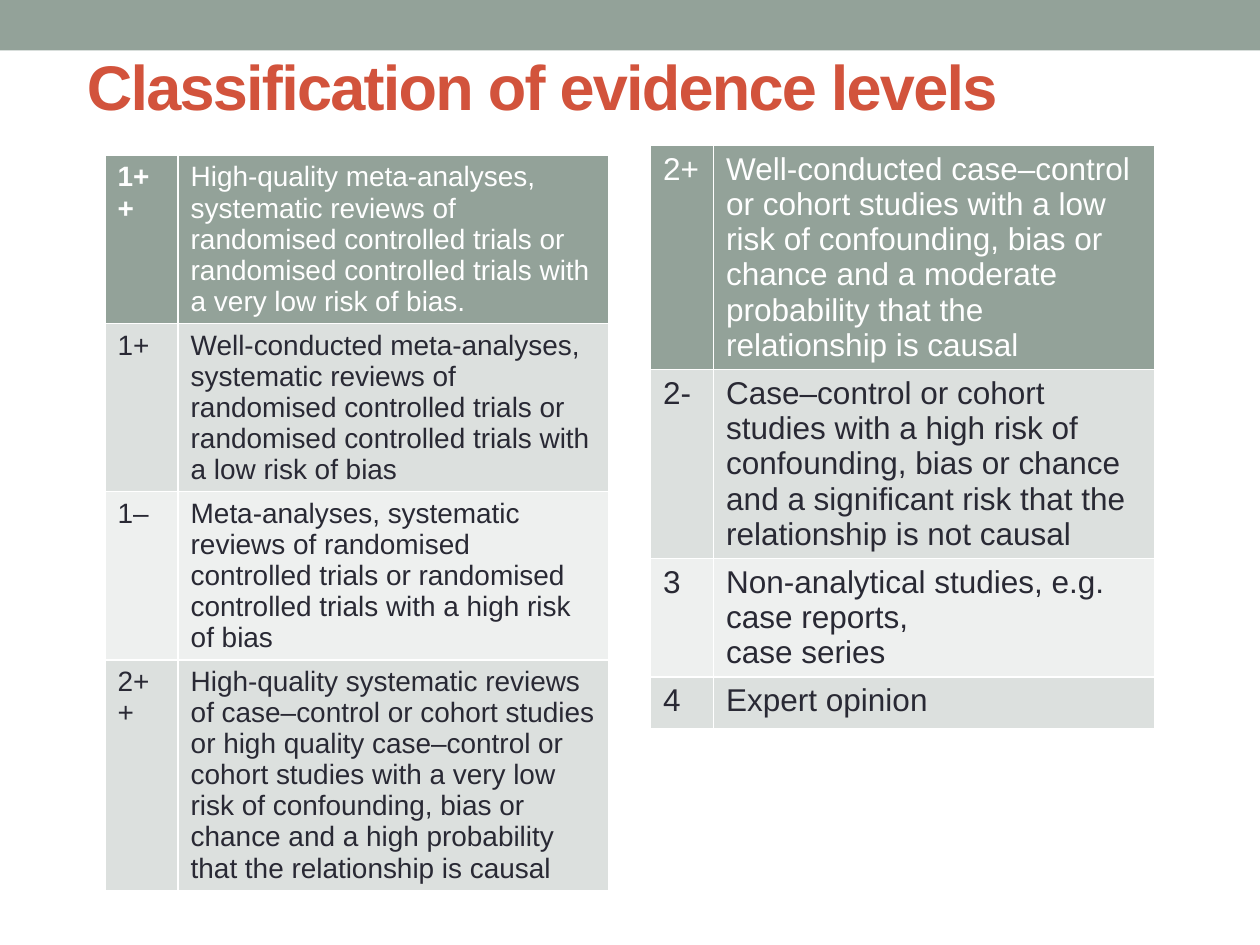
from pptx import Presentation
from pptx.dml.color import RGBColor
from pptx.enum import shapes, text
from pptx.util import Pt

COLORS = {
    "sage": "93A299",
    "title": "D2533C",
    "text": "292934",
    "white": "FFFFFF",
    "band_dark": "DCE0DE",
    "band_light": "EEF0EF",
}
FONT = "Arial"
ROW_HEIGHT = 29.5  # minimum; rows grow with their text

HIGH_LEVELS = [
    ("1++", "High-quality meta-analyses, systematic reviews of randomised controlled "
            "trials or randomised controlled trials with a very low risk of bias."),
    ("1+", "Well-conducted meta-analyses, systematic reviews of randomised controlled "
           "trials or randomised controlled trials with a low risk of bias"),
    ("1–", "Meta-analyses, systematic reviews of randomised controlled trials or "
           "randomised controlled trials with a high risk of bias"),
    ("2++", "High-quality systematic reviews of case–control or cohort studies or high "
            "quality case–control or cohort studies with a very low risk of confounding, "
            "bias or chance and a high probability that the relationship is causal"),
]
LOW_LEVELS = [
    ("2+", "Well-conducted case–control or cohort studies with a low risk of confounding, "
           "bias or chance and a moderate probability that the relationship is causal"),
    ("2-", "Case–control or cohort studies with a high risk of confounding, bias or chance "
           "and a significant risk that the relationship is not causal"),
    ("3", "Non-analytical studies, e.g. case reports,\ncase series"),
    ("4", "Expert opinion"),
]


def rgb(name):
    return RGBColor.from_string(COLORS[name])


def style_font(font, size, color, bold):
    font.name, font.size, font.bold = FONT, Pt(size), bold
    font.color.rgb = rgb(color)


def add_top_band(s, x, y, w, h):
    sp = s.shapes.add_shape(shapes.MSO_SHAPE.RECTANGLE, Pt(x), Pt(y), Pt(w), Pt(h))
    sp.shadow.inherit = False
    sp.fill.solid()
    sp.fill.fore_color.rgb = rgb("sage")
    sp.line.fill.background()


def set_title(s, x, y, w, h, title):
    sp = s.shapes.title
    sp.left, sp.top, sp.width, sp.height = Pt(x), Pt(y), Pt(w), Pt(h)
    tf = sp.text_frame
    tf.text = title
    tf.word_wrap = True
    tf.vertical_anchor = text.MSO_ANCHOR.MIDDLE
    p = tf.paragraphs[0]
    p.alignment = text.PP_ALIGN.LEFT
    style_font(p.font, 36, "title", True)
    p.runs[0].font._element.set("spc", "-100")


def add_levels_table(s, x, y, w, code_width, levels, size, bold_code=False):
    """Level code and description per row; the first row is the header band."""
    frame = s.shapes.add_table(len(levels), 2, Pt(x), Pt(y), Pt(w),
                               Pt(ROW_HEIGHT * len(levels)))
    table = frame.table
    table.columns[0].width = Pt(code_width)
    table.columns[1].width = Pt(w - code_width)
    for i, level in enumerate(levels):
        band = "sage" if i == 0 else ("band_light", "band_dark")[i % 2]
        for j, words in enumerate(level):
            cell = table.cell(i, j)
            cell.fill.solid()
            cell.fill.fore_color.rgb = rgb(band)
            cell.text = words
            for p in cell.text_frame.paragraphs:
                style_font(p.font, size, "text" if i else "white",
                           bold_code and i == 0 and j == 0)


def build_evidence_slide(prs):
    s = prs.slides.add_slide(prs.slide_layouts[5])
    add_top_band(s, 0, 0, 720, 28.8)
    set_title(s, 42.5, 9.4, 633, 79, "Classification of evidence levels")
    add_levels_table(s, 60, 88.8, 288, 41.8, HIGH_LEVELS, 16, bold_code=True)
    add_levels_table(s, 371.8, 83, 288, 36, LOW_LEVELS, 18)


def main():
    prs = Presentation()
    prs.slide_width, prs.slide_height = Pt(720), Pt(540)
    build_evidence_slide(prs)
    prs.save("out.pptx")


if __name__ == "__main__":
    main()
